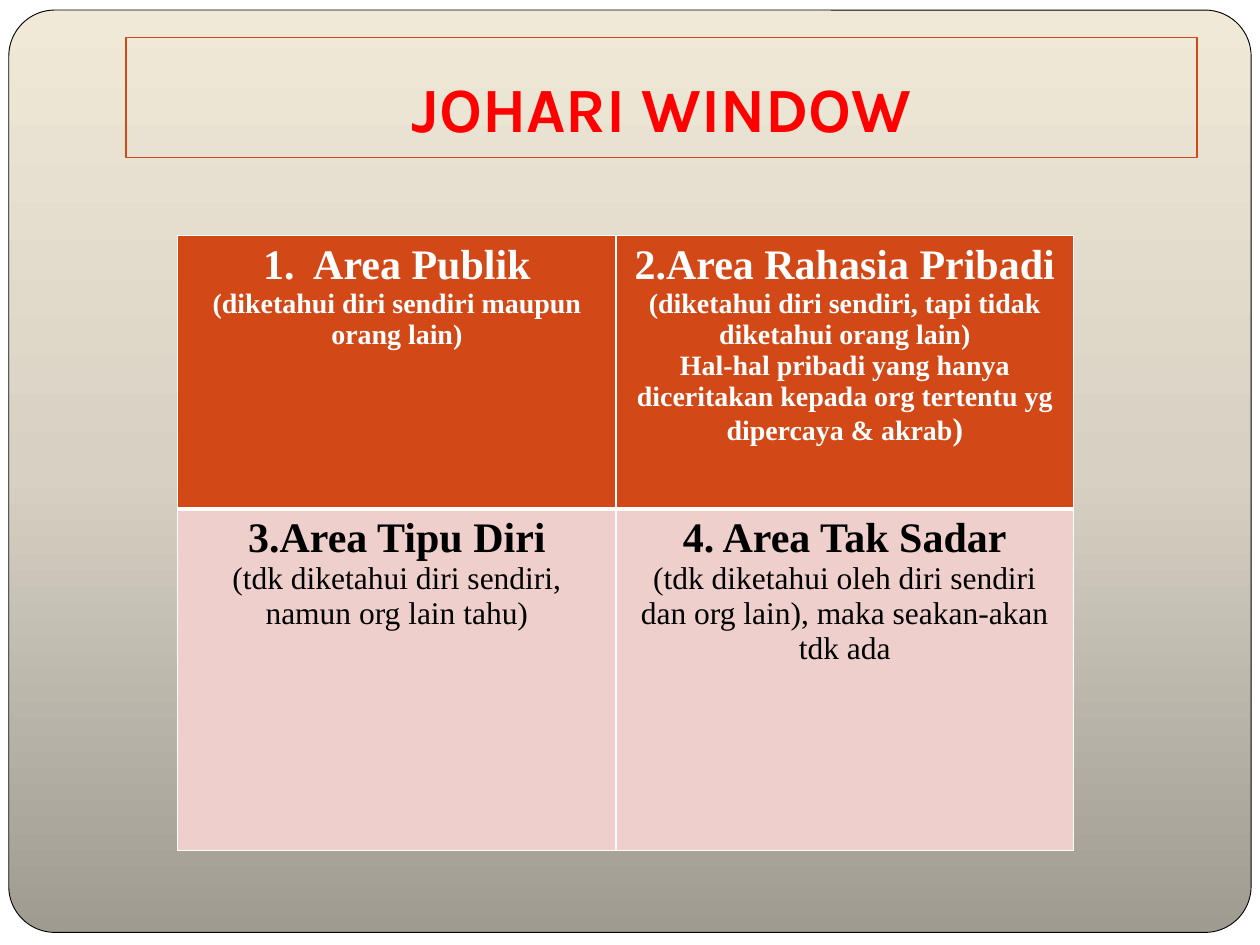
import copy

import lxml.etree
import pptx
import pptx.dml.color
import pptx.enum.shapes
import pptx.enum.text
import pptx.oxml.ns
import pptx.util

Inches = pptx.util.Inches
Pt = pptx.util.Pt
qn = pptx.oxml.ns.qn

COLORS = {
    "white": "FFFFFF",
    "black": "000000",
    "title": "FF0000",
    "accent": "D34817",
    "pale": "EFCFCC",
    "gradient_bottom": "9F9B91",
    "gradient_middle": "D7D1C4",
    "gradient_top": "F0E9D8",
}

# Each cell is a list of paragraphs; each paragraph is a list of (text, size, bold).
AREAS = [
    [
        [
            [("1.  Area Publik", 24, True)],
            [("(diketahui diri sendiri maupun orang lain)", 16, True)],
        ],
        [
            [("2.Area Rahasia Pribadi", 24, True)],
            [("(diketahui diri sendiri, tapi tidak diketahui orang lain)", 16, True)],
            [
                ("Hal-hal pribadi yang hanya diceritakan kepada org tertentu yg "
                 "dipercaya & akrab", 16, True),
                (")", 18, True),
            ],
        ],
    ],
    [
        [
            [("3.Area Tipu Diri", 24, True)],
            [("(tdk diketahui diri sendiri, namun org lain tahu)", 18, False)],
        ],
        [
            [("4. Area Tak Sadar", 24, True)],
            [("(tdk diketahui oleh diri sendiri dan org lain), maka seakan-akan "
              "tdk ada", 18, False)],
        ],
    ],
]


def rgb(name):
    return pptx.dml.color.RGBColor.from_string(COLORS[name])


class SlideBuilder:
    title_font = "Karla"
    body_font = "Times New Roman"

    def __init__(self, slide):
        self.slide = slide

    def background(self, color):
        fill = self.slide.background.fill
        fill.solid()
        fill.fore_color.rgb = rgb(color)

    def gradient_panel(self, left, top, width, height, corner, colors):
        """Draw a rounded panel whose colors run evenly from bottom to top."""
        panel = self.slide.shapes.add_shape(
            pptx.enum.shapes.MSO_SHAPE.ROUNDED_RECTANGLE, left, top, width, height)
        panel.shadow.inherit = False
        panel.adjustments[0] = corner
        panel.line.color.rgb = rgb("black")
        panel.line.width = Pt(0.5)
        panel.fill.gradient()
        panel.fill.gradient_angle = 90
        stop_list = panel.fill._fill._gradFill.find(qn("a:gsLst"))
        for _ in range(len(colors) - len(stop_list)):
            stop_list.append(copy.deepcopy(stop_list[0]))
        for index, (stop, color) in enumerate(zip(panel.fill.gradient_stops, colors)):
            stop.position = index / (len(colors) - 1)
            stop.color.rgb = rgb(color)

    def style_run(self, run, font, size, color, bold):
        run.font.name = font
        run.font.size = Pt(size)
        run.font.bold = bold
        run.font.color.rgb = rgb(color)

    def title(self, left, top, width, height, text):
        box = self.slide.shapes.add_textbox(left, top, width, height)
        box.line.color.rgb = rgb("accent")
        box.line.width = Pt(0.75)
        frame = box.text_frame
        frame.word_wrap = True
        frame.vertical_anchor = pptx.enum.text.MSO_ANCHOR.BOTTOM
        frame.margin_bottom = Inches(0.1)
        frame.text = text
        para = frame.paragraphs[0]
        para.alignment = pptx.enum.text.PP_ALIGN.CENTER
        self.style_run(para.runs[0], self.title_font, 36, "title", True)

    def cell_borders(self, cell, widths):
        """Add white borders; widths gives points for left, right, top, bottom."""
        properties = cell._tc.get_or_add_tcPr()
        for index, (side, width) in enumerate(zip("LRTB", widths)):
            border = lxml.etree.Element(qn(f"a:ln{side}"), w=str(Pt(width)))
            fill = lxml.etree.SubElement(border, qn("a:solidFill"))
            lxml.etree.SubElement(fill, qn("a:srgbClr"), val=COLORS["white"])
            properties.insert(index, border)

    def fill_cell(self, cell, paragraphs, fill, color):
        cell.fill.solid()
        cell.fill.fore_color.rgb = rgb(fill)
        frame = cell.text_frame
        for index, spans in enumerate(paragraphs):
            para = frame.add_paragraph() if index else frame.paragraphs[0]
            para.alignment = pptx.enum.text.PP_ALIGN.CENTER
            for text, size, bold in spans:
                span = para.add_run()
                span.text = text
                self.style_run(span, self.body_font, size, color, bold)

    def window_table(self, left, top, column_widths, row_heights, areas):
        table = self.slide.shapes.add_table(
            len(row_heights), len(column_widths), left, top,
            sum(column_widths), sum(row_heights)).table
        for column, width in zip(table.columns, column_widths):
            column.width = width
        for row, height in zip(table.rows, row_heights):
            row.height = height
        row_styles = [("accent", "white", (1, 1, 1, 3)), ("pale", "black", (1, 1, 3, 1))]
        for row, cells, (fill, color, borders) in zip(table.rows, areas, row_styles):
            for cell, paragraphs in zip(row.cells, cells):
                self.fill_cell(cell, paragraphs, fill, color)
                self.cell_borders(cell, borders)


def main():
    deck = pptx.Presentation()
    deck.slide_width = Inches(10)
    deck.slide_height = Inches(7.5)
    page = SlideBuilder(deck.slides.add_slide(deck.slide_layouts[6]))
    page.background("white")
    page.gradient_panel(
        Inches(0.07), Inches(0.08), Inches(9.86), Inches(7.32), 0.05,
        ["gradient_bottom", "gradient_middle", "gradient_top"])
    page.title(Inches(1), Inches(0.3), Inches(8.5), Inches(0.95), "JOHARI WINDOW")
    page.window_table(
        Inches(1.41), Inches(1.87), [Inches(3.48), Inches(3.63)],
        [Inches(2.17), Inches(2.71)], AREAS)
    deck.save("out.pptx")


if __name__ == "__main__":
    main()
